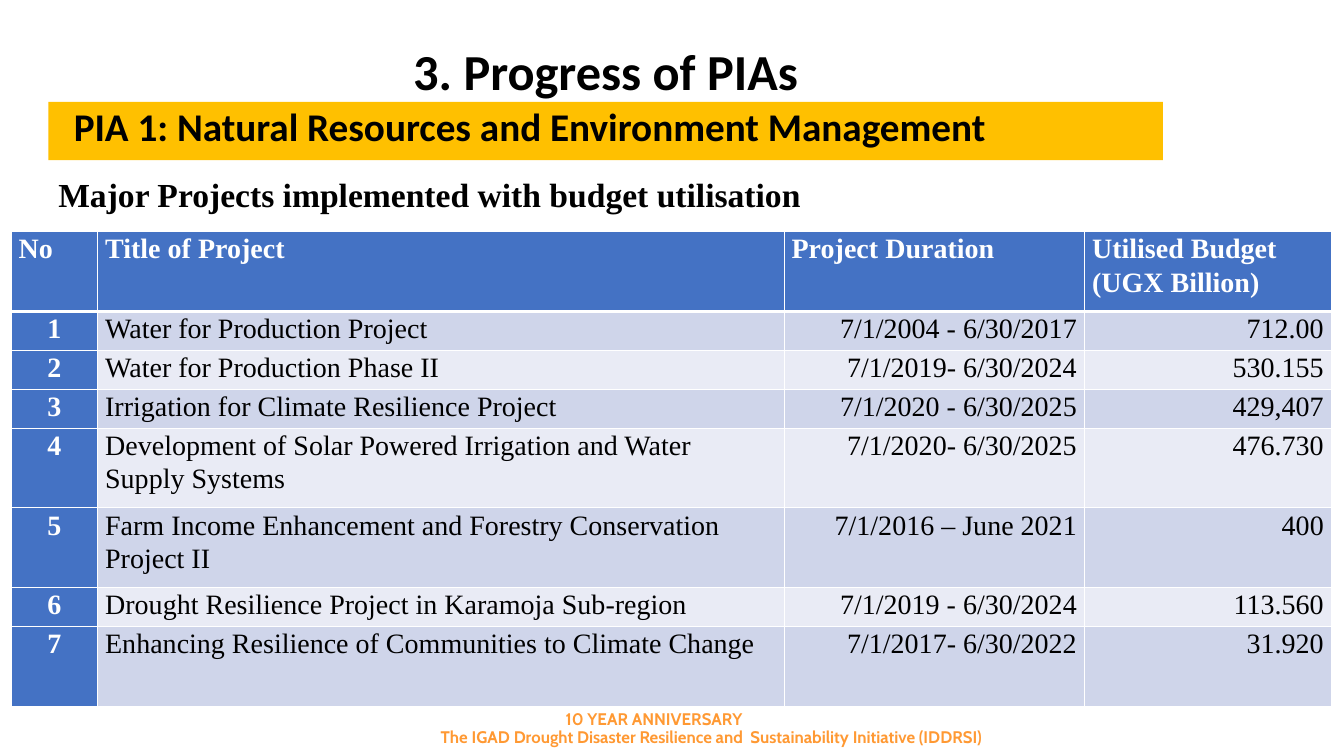
"""Build the slide on PIA 1 projects and their budget utilisation."""

from dataclasses import dataclass
from typing import Optional

from lxml.etree import SubElement
from pptx import Presentation
from pptx.dml.color import RGBColor
from pptx.enum.shapes import MSO_SHAPE
from pptx.enum.text import MSO_ANCHOR, MSO_AUTO_SIZE, PP_ALIGN
from pptx.oxml.ns import qn
from pptx.util import Cm, Pt


@dataclass(frozen=True)
class Theme:
    black: str = "000000"
    white: str = "FFFFFF"
    amber: str = "FFC000"
    orange: str = "FF9933"
    blue: str = "4472C4"
    bands: tuple = ("CFD5EA", "E9EBF5")
    sans: str = "Calibri"
    serif: str = "Times New Roman"
    rounded: str = "Cabin"
    title: int = 36
    banner: int = 28
    subtitle: int = 24
    table: int = 20
    footer: int = 12


@dataclass(frozen=True)
class Style:
    font: str
    size: int
    color: str
    bold: bool = True
    align: PP_ALIGN = PP_ALIGN.LEFT
    spacing: Optional[float] = None
    after: Optional[int] = None


@dataclass(frozen=True)
class Label:
    text: str
    left: float
    top: float
    width: float
    height: float
    style: Style


@dataclass(frozen=True)
class Project:
    title: str
    duration: str
    budget: str
    height: float


THEME = Theme()
FOOTER = Style(THEME.rounded, THEME.footer, THEME.orange, align=PP_ALIGN.CENTER)
TITLE = Label("3. Progress of PIAs", 1.22, 1.02, 28.09, 1.47,
              Style(THEME.sans, THEME.title, THEME.black, align=PP_ALIGN.CENTER))
BANNER = Label("PIA 1: Natural Resources and Environment Management",
               1.22, 2.57, 28.09, 1.47,
               Style(THEME.sans, THEME.banner, THEME.black,
                     align=PP_ALIGN.JUSTIFY, after=6))
LABELS = (
    Label("10 YEAR ANNIVERSARY", 8, 17.73, 16.97, 0.76, FOOTER),
    Label("The IGAD Drought Disaster Resilience and  Sustainability Initiative (IDDRSI)",
          9.45, 18.19, 16.97, 0.76, FOOTER),
    Label("Major Projects implemented with budget utilisation",
          1.22, 4.19, 31.6, 1.3,
          Style(THEME.serif, THEME.subtitle, THEME.black, spacing=1.07, after=8)),
)

SHORT, TALL = 0.98, 2.01
COLUMNS = (2.18, 17.3, 7.57, 6.22)
HEADER = ("No", "Title of Project", "Project Duration", "Utilised Budget (UGX Billion)")
BODY_ALIGN = (PP_ALIGN.CENTER, PP_ALIGN.LEFT, PP_ALIGN.RIGHT, PP_ALIGN.RIGHT)
PROJECTS = (
    Project("Water for Production Project", "7/1/2004 - 6/30/2017", "712.00", SHORT),
    Project("Water for Production Phase II", "7/1/2019- 6/30/2024", "530.155", SHORT),
    Project("Irrigation for Climate Resilience Project",
            "7/1/2020 - 6/30/2025", "429,407", SHORT),
    Project("Development of Solar Powered Irrigation and Water Supply Systems",
            "7/1/2020- 6/30/2025", "476.730", TALL),
    Project("Farm Income Enhancement and Forestry Conservation Project II",
            "7/1/2016 – June 2021", "400", TALL),
    Project("Drought Resilience Project in Karamoja Sub-region",
            "7/1/2019 - 6/30/2024", "113.560", SHORT),
    Project("Enhancing Resilience of Communities to Climate Change",
            "7/1/2017- 6/30/2022", "31.920", TALL),
)


def write(tf, text: str, style: Style) -> None:
    p = tf.paragraphs[0]
    p.alignment = style.align
    if style.spacing is not None:
        p.line_spacing = style.spacing
    if style.after is not None:
        p.space_after = Pt(style.after)
    r = p.add_run()
    r.text = text
    r.font.name = style.font
    r.font.size = Pt(style.size)
    r.font.bold = style.bold
    r.font.color.rgb = RGBColor.from_string(style.color)


def bounds(label: Label) -> tuple:
    return tuple(Cm(v) for v in (label.left, label.top, label.width, label.height))


def trim(tf, left: float = 0) -> None:
    tf.margin_left = Cm(left)
    tf.margin_right = tf.margin_top = tf.margin_bottom = 0
    tf.vertical_anchor = MSO_ANCHOR.TOP
    tf.word_wrap = True


def add_label(s, label: Label) -> None:
    tf = s.shapes.add_textbox(*bounds(label)).text_frame
    tf.word_wrap = True
    tf.auto_size = MSO_AUTO_SIZE.SHAPE_TO_FIT_TEXT
    write(tf, label.text, label.style)


def set_title(s, label: Label) -> None:
    sp = s.shapes.title
    sp.left, sp.top, sp.width, sp.height = bounds(label)
    trim(sp.text_frame)
    sp.text_frame.auto_size = MSO_AUTO_SIZE.NONE
    write(sp.text_frame, label.text, label.style)


def add_banner(s, label: Label) -> None:
    sp = s.shapes.add_shape(MSO_SHAPE.RECTANGLE, *bounds(label))
    sp.shadow.inherit = False
    sp.fill.solid()
    sp.fill.fore_color.rgb = RGBColor.from_string(THEME.amber)
    sp.line.fill.background()
    trim(sp.text_frame, left=0.64)
    write(sp.text_frame, label.text, label.style)


def set_borders(cell, top: int, bottom: int) -> None:
    widths = {"a:lnL": 1, "a:lnR": 1, "a:lnT": top, "a:lnB": bottom}
    for tag, width in widths.items():
        ln = SubElement(cell._tc.get_or_add_tcPr(), qn(tag), w=str(Pt(width)))
        SubElement(SubElement(ln, qn("a:solidFill")), qn("a:srgbClr"), val=THEME.white)


def fill_cell(cell, row: int, col: int, text: str) -> None:
    heading = row == 0 or col == 0
    set_borders(cell, top=3 if row == 1 else 1, bottom=3 if row == 0 else 1)
    cell.fill.solid()
    cell.fill.fore_color.rgb = RGBColor.from_string(
        THEME.blue if heading else THEME.bands[(row - 1) % 2])
    cell.margin_left = cell.margin_right = Cm(0.19)
    cell.margin_top = cell.margin_bottom = 0
    write(cell.text_frame, text, Style(
        THEME.serif, THEME.table, THEME.white if heading else THEME.black, heading,
        PP_ALIGN.LEFT if row == 0 else BODY_ALIGN[col], 1.07, 8))


def add_projects(s) -> None:
    rows = [HEADER] + [(str(n), p.title, p.duration, p.budget)
                       for n, p in enumerate(PROJECTS, 1)]
    heights = [TALL] + [p.height for p in PROJECTS]
    table = s.shapes.add_table(len(rows), len(COLUMNS), Cm(0.28), Cm(5.84),
                               Cm(sum(COLUMNS)), Cm(sum(heights))).table
    table.horz_banding = False
    for column, width in zip(table.columns, COLUMNS):
        column.width = Cm(width)
    for i, (values, height) in enumerate(zip(rows, heights)):
        table.rows[i].height = Cm(height)
        for j, text in enumerate(values):
            fill_cell(table.cell(i, j), i, j, text)


def main() -> None:
    prs = Presentation()
    prs.slide_width, prs.slide_height = Cm(33.87), Cm(19.05)
    s = prs.slides.add_slide(prs.slide_layouts[5])
    set_title(s, TITLE)
    add_banner(s, BANNER)
    for label in LABELS:
        add_label(s, label)
    add_projects(s)
    prs.save("out.pptx")


if __name__ == "__main__":
    main()
